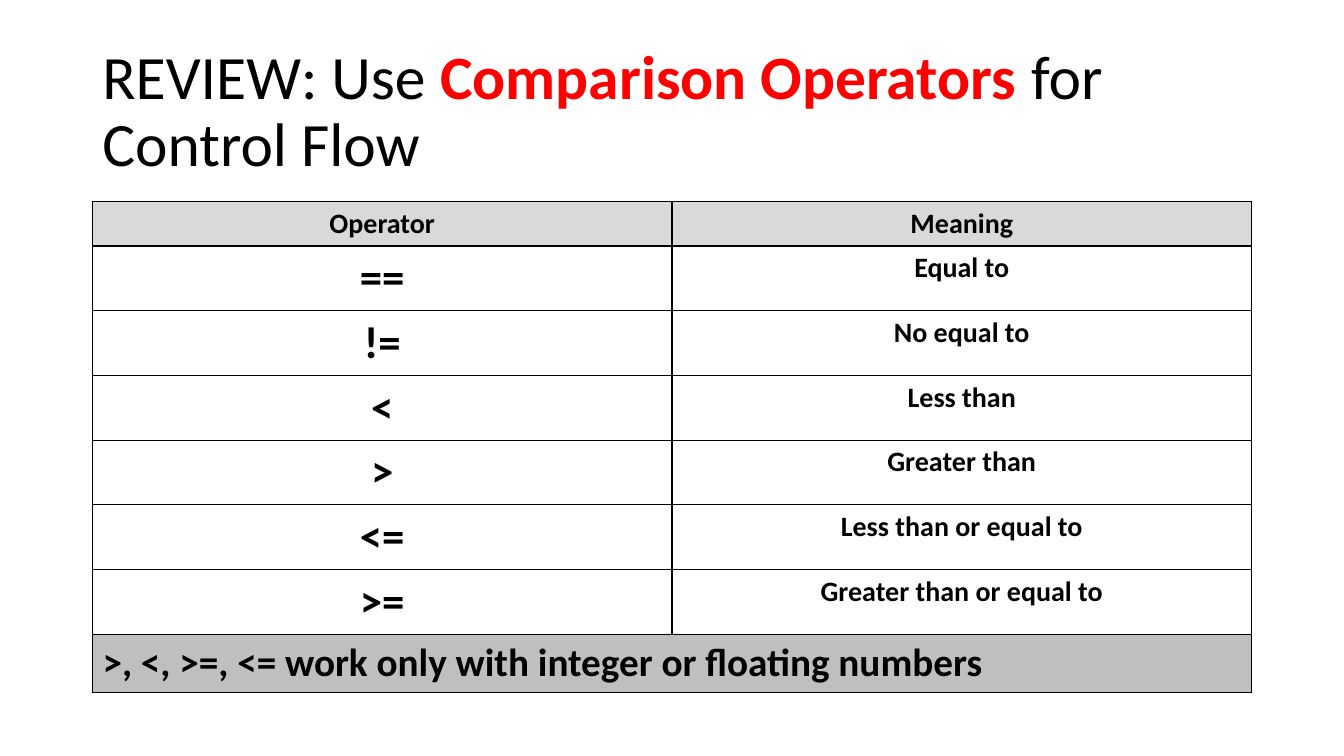
from typing import NamedTuple, Optional

from lxml.etree import SubElement
from pptx import Presentation
from pptx.dml.color import RGBColor
from pptx.enum.text import MSO_ANCHOR as Anchor, PP_ALIGN as Align
from pptx.oxml.ns import qn
from pptx.util import Cm, Pt

FONT = "Calibri"
BLACK, RED, HEADER_GRAY, NOTE_GRAY = "000000", "FF0000", "D9D9D9", "BFBFBF"
LEFT, WIDTH = 2.33, 29.21


class Run(NamedTuple):
    text: str
    color: str = BLACK
    bold: bool = False


class Row(NamedTuple):
    texts: tuple
    sizes: tuple
    height: float
    fill: Optional[str] = None
    align: Align = Align.CENTER


TITLE = [
    Run("REVIEW: Use "),
    Run("Comparison Operators", RED, True),
    Run(" for Control Flow"),
]

OPERATORS = {
    "==": "Equal to",
    "!=": "No equal to",
    "<": "Less than",
    ">": "Greater than",
    "<=": "Less than or equal to",
    ">=": "Greater than or equal to",
}

ROWS = [
    Row(("Operator", "Meaning"), (20, 20), 1.12, HEADER_GRAY),
    *(Row(pair, (32, 20), 1.63) for pair in OPERATORS.items()),
    Row((">, <, >=, <= work only with integer or floating numbers",), (28,),
        1.46, NOTE_GRAY, Align.LEFT),
]


def rgb(color: str) -> RGBColor:
    return RGBColor.from_string(color)


def format_run(run, size: float, color: str, bold: bool) -> None:
    run.font.name = FONT
    run.font.size = Pt(size)
    run.font.bold = bold
    run.font.color.rgb = rgb(color)


def add_title(slide, runs: list) -> None:
    shape = slide.shapes.add_textbox(Cm(LEFT), Cm(1.01), Cm(WIDTH), Cm(3.68))
    text_frame = shape.text_frame
    text_frame.word_wrap = True
    text_frame.vertical_anchor = Anchor.MIDDLE
    paragraph = text_frame.paragraphs[0]
    paragraph.line_spacing = 0.9
    for part in runs:
        run = paragraph.add_run()
        run.text = part.text
        format_run(run, 44, part.color, part.bold)


def set_borders(cell) -> None:
    properties = cell._tc.get_or_add_tcPr()
    for position, side in enumerate(("a:lnL", "a:lnR", "a:lnT", "a:lnB")):
        line = SubElement(properties, qn(side), w=str(Pt(1)))
        fill = SubElement(line, qn("a:solidFill"))
        SubElement(fill, qn("a:srgbClr"), val=BLACK)
        properties.insert(position, line)  # borders come before the fill


def fill_cell(cell, text: str, size: float, align: Align) -> None:
    paragraph = cell.text_frame.paragraphs[0]
    paragraph.text = text
    paragraph.alignment = align
    format_run(paragraph.runs[0], size, BLACK, True)


def add_operator_table(slide, rows: list) -> None:
    columns = 2
    height = sum(row.height for row in rows)
    table = slide.shapes.add_table(
        len(rows), columns, Cm(LEFT), Cm(5.08), Cm(WIDTH), Cm(height)).table
    table.first_row = table.horz_banding = False
    for index, row in enumerate(rows):
        table.rows[index].height = Cm(row.height)
        for column in range(columns):
            cell = table.cell(index, column)
            if row.fill:
                cell.fill.solid()
                cell.fill.fore_color.rgb = rgb(row.fill)
            else:
                cell.fill.background()
            set_borders(cell)
        for column, (text, size) in enumerate(zip(row.texts, row.sizes)):
            fill_cell(table.cell(index, column), text, size, row.align)
        # A row with a single text spans the whole table
        if len(row.texts) == 1:
            table.cell(index, 0).merge(table.cell(index, columns - 1))


def main() -> None:
    presentation = Presentation()
    presentation.slide_width = Cm(33.87)
    presentation.slide_height = Cm(19.05)
    slide = presentation.slides.add_slide(presentation.slide_layouts[6])
    add_title(slide, TITLE)
    add_operator_table(slide, ROWS)
    presentation.save("out.pptx")


if __name__ == "__main__":
    main()
